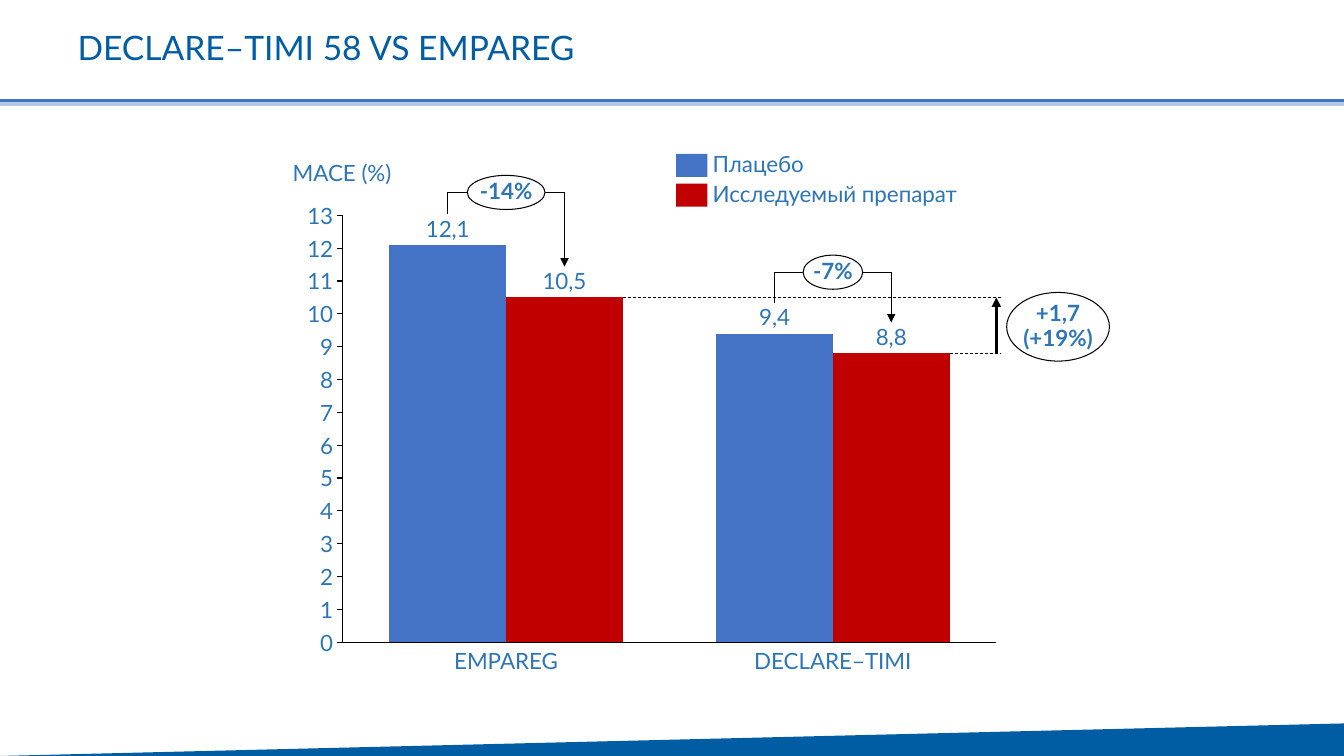
from lxml import etree
from pptx import Presentation
from pptx.chart.data import CategoryChartData
from pptx.dml.color import RGBColor
from pptx.enum import chart as ch, dml, shapes, text
from pptx.oxml import parse_xml
from pptx.oxml.ns import nsdecls, qn
from pptx.util import Cm, Pt

NAVY = RGBColor(0x00, 0x5D, 0xA4)
BLUE = RGBColor(0x44, 0x72, 0xC4)
PALE = RGBColor(0xB4, 0xC7, 0xE7)
RED = RGBColor(0xC0, 0x00, 0x00)
INK = RGBColor(0x2E, 0x75, 0xB6)
BLACK = RGBColor(0x00, 0x00, 0x00)
WHITE = RGBColor(0xFF, 0xFF, 0xFF)
FONT = "Lato"
LEFT, CENTER = text.PP_ALIGN.LEFT, text.PP_ALIGN.CENTER
TOP, MIDDLE, BOTTOM = text.MSO_ANCHOR.TOP, text.MSO_ANCHOR.MIDDLE, text.MSO_ANCHOR.BOTTOM

prs = Presentation()
prs.slide_width, prs.slide_height = Cm(33.87), Cm(19.05)
slide = prs.slides.add_slide(prs.slide_layouts[5])


def add_line(x1, y1, x2, y2, width, color=BLACK, dashed=False, arrow=False):
    line = slide.shapes.add_connector(
        shapes.MSO_CONNECTOR.STRAIGHT, Cm(x1), Cm(y1), Cm(x2), Cm(y2))
    line.line.color.rgb = color
    line.line.width = Pt(width)
    if dashed:
        line.line.dash_style = dml.MSO_LINE.DASH
    if arrow:
        etree.SubElement(line.line._get_or_add_ln(), qn("a:tailEnd"), type="triangle")
    etree.SubElement(line._element.spPr, qn("a:effectLst"))


def add_text(words, x, y, w, h, align=CENTER, anchor=MIDDLE, oval=False):
    if oval:
        sp = slide.shapes.add_shape(shapes.MSO_SHAPE.OVAL, Cm(x), Cm(y), Cm(w), Cm(h))
        sp.shadow.inherit = False
        sp.fill.solid()
        sp.fill.fore_color.rgb = WHITE
        sp.line.color.rgb = BLACK
        sp.line.width = Pt(0.75)
    else:
        sp = slide.shapes.add_textbox(Cm(x), Cm(y), Cm(w), Cm(h))
    tf = sp.text_frame
    tf.word_wrap = not oval
    tf.vertical_anchor = anchor
    tf.margin_left = tf.margin_right = tf.margin_top = tf.margin_bottom = 0
    p = tf.paragraphs[0]
    p.text = words
    p.alignment = align
    p.line_spacing = 0.9
    p.font.name, p.font.size, p.font.bold = FONT, Pt(16), oval
    p.font.color.rgb = INK


builder = slide.shapes.build_freeform(Cm(33.87), Cm(18.23))
builder.add_line_segments([(Cm(0), Cm(19.05)), (Cm(33.87), Cm(19.05))], close=True)
wedge = builder.convert_to_shape()
wedge.shadow.inherit = False
wedge.fill.solid()
wedge.fill.fore_color.rgb = NAVY
wedge.line.fill.background()

add_line(0, 2.54, 33.87, 2.54, 3, BLUE)
add_line(0, 2.62, 33.87, 2.62, 3, PALE)

title = slide.shapes.title
title.left, title.top, title.width, title.height = Cm(1.7), Cm(0.18), Cm(27.74), Cm(2.16)
title.text_frame.vertical_anchor = MIDDLE
p = title.text_frame.paragraphs[0]
p.text = "DECLARE–TIMI 58 VS EMPAREG"
p.alignment = LEFT
p.line_spacing = 0.9
p.font.name, p.font.size = FONT, Pt(24)
p.font.color.rgb = NAVY

trials = ["EMPAREG", "DECLARE–TIMI"]
series = [("Плацебо", (12.1, 9.4), BLUE), ("Исследуемый препарат", (10.5, 8.8), RED)]
data = CategoryChartData()
data.categories = trials
for name, values, color in series:
    data.add_series(name, values)

chart_x, chart_y, chart_w, chart_h = 7.19, 5.08, 18.1, 11.57
chart = slide.shapes.add_chart(
    ch.XL_CHART_TYPE.COLUMN_CLUSTERED,
    Cm(chart_x), Cm(chart_y), Cm(chart_w), Cm(chart_h), data).chart
chart.has_legend = chart.has_title = False
chart.font.name, chart.font.size = FONT, Pt(10)
chart.font.color.rgb = BLACK
plot = chart.plots[0]
plot.gap_width, plot.overlap, plot.vary_by_categories = 80, 0, False
for bars, (name, values, color) in zip(plot.series, series):
    bars.format.fill.solid()
    bars.format.fill.fore_color.rgb = color

for axis in (chart.category_axis, chart.value_axis):
    axis.has_major_gridlines = False
    axis.major_tick_mark = axis.minor_tick_mark = ch.XL_TICK_MARK.NONE
    axis.format.line.color.rgb = BLACK
    axis.format.line.width = Pt(0.75)
chart.category_axis.tick_label_position = ch.XL_TICK_LABEL_POSITION.NONE
axis = chart.value_axis
axis.major_tick_mark = ch.XL_TICK_MARK.OUTSIDE
axis.minimum_scale, axis.maximum_scale, axis.major_unit = 0, 13, 1
labels = axis.tick_labels
labels.number_format, labels.number_format_is_linked = '#,##0;"-"#,##0', False
labels.font.name, labels.font.size = FONT, Pt(16)
labels.font.color.rgb = INK

inner = {"x": 0.08, "y": 0.03, "w": 0.91, "h": 0.93}
area = chart._chartSpace.chart.plotArea
for old in area.findall(qn("c:layout")):
    area.remove(old)
area.insert(0, parse_xml(
    f'<c:layout {nsdecls("c")}><c:manualLayout><c:layoutTarget val="inner"/>'
    '<c:xMode val="edge"/><c:yMode val="edge"/>'
    + "".join(f'<c:{key} val="{val}"/>' for key, val in inner.items())
    + "</c:manualLayout></c:layout>"))

plot_x, plot_w = chart_x + inner["x"] * chart_w, inner["w"] * chart_w
plot_h = inner["h"] * chart_h
base = chart_y + inner["y"] * chart_h + plot_h
trial_w = plot_w / len(trials)
bar_w = trial_w / 2.8
right = plot_x + plot_w

new_tops = [base - value * plot_h / 13 for value in series[1][1]]
bar_ends = [plot_x + trial_w * (i + 0.5) + bar_w for i in range(len(trials))]
for bar_end, y in zip(bar_ends, new_tops):
    add_line(bar_end, y, right + 0.12, y, 0.5, dashed=True)
add_line(right, new_tops[1], right, new_tops[0], 2.25, arrow=True)
add_text("+1,7\n(+19%)", 25.37, 7.37, 2.59, 1.73, oval=True)

brackets = [("-14%", 4.85, 1.96), ("-7%", 6.86, 1.5)]
for i, (trial, (change, bracket_y, oval_w)) in enumerate(zip(trials, brackets)):
    mid = plot_x + trial_w * (i + 0.5)
    xs = mid - bar_w / 2, mid + bar_w / 2
    label_tops = []
    for x, (name, values, color) in zip(xs, series):
        label_y = base - values[i] * plot_h / 13 - 0.68
        label_tops.append(label_y)
        add_text(f"{values[i]}".replace(".", ","), x - 0.8, label_y, 1.6, 0.61, anchor=BOTTOM)
    add_line(xs[0], label_tops[0] - 0.1, xs[0], bracket_y, 1)
    add_line(xs[0], bracket_y, xs[1], bracket_y, 1)
    add_line(xs[1], bracket_y, xs[1], label_tops[1] - 0.1, 1, arrow=True)
    add_text(change, mid - oval_w / 2, bracket_y - 0.43, oval_w, 0.86, oval=True)
    add_text(trial, mid - 2.5, 16.38, 5, 0.61, anchor=TOP)

add_text("MACE (%)", 6.87, 4.09, 3.5, 0.61, anchor=BOTTOM)

for i, (name, values, color) in enumerate(series):
    y = 3.88 + 0.75 * i
    key = slide.shapes.add_shape(shapes.MSO_SHAPE.RECTANGLE, Cm(17.04), Cm(y), Cm(0.79), Cm(0.58))
    key.shadow.inherit = False
    key.fill.solid()
    key.fill.fore_color.rgb = color
    key.line.fill.background()
    add_text(name, 17.96, y - 0.02, 7, 0.61, align=LEFT)

prs.save("out.pptx")
